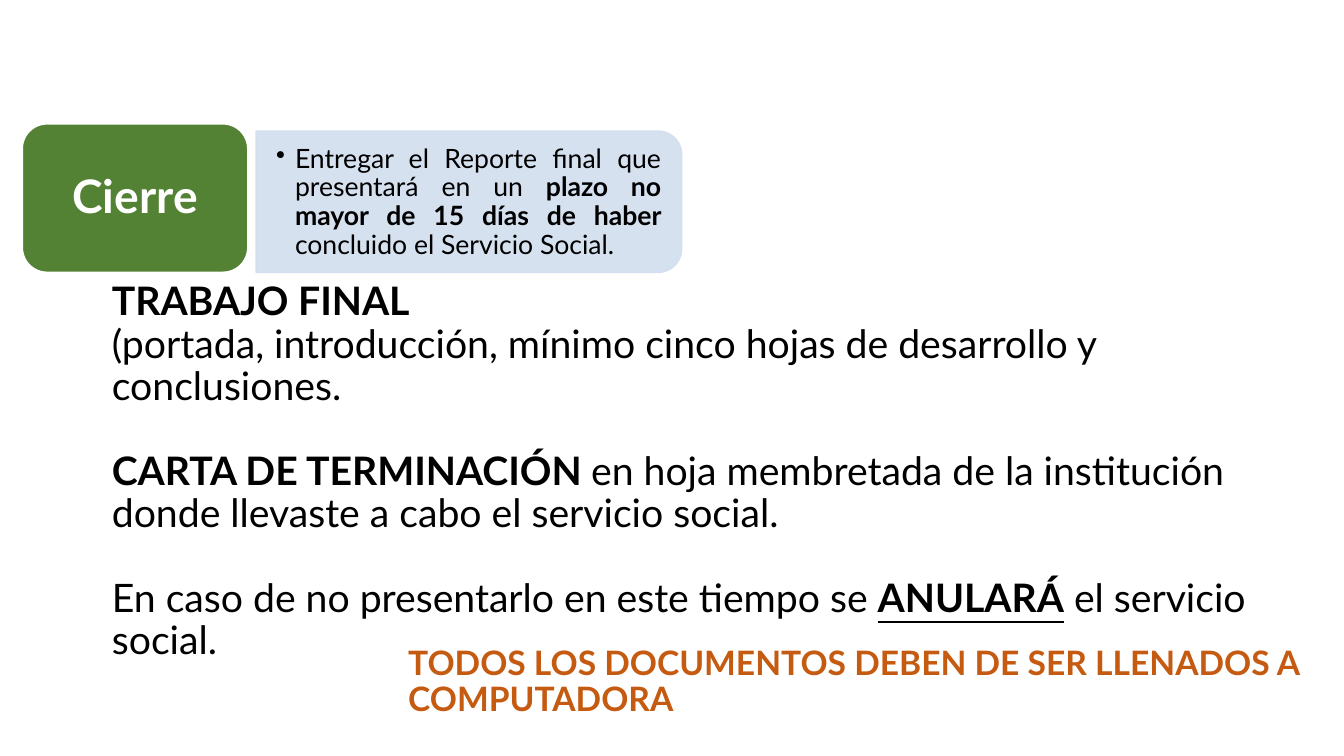
import dataclasses

import lxml.etree
import pptx
import pptx.dml.color
import pptx.enum.shapes
import pptx.enum.text
import pptx.oxml.ns
import pptx.util

Pt = pptx.util.Pt
Align = pptx.enum.text.PP_ALIGN
Anchor = pptx.enum.text.MSO_ANCHOR
Shape = pptx.enum.shapes.MSO_SHAPE


@dataclasses.dataclass(frozen=True)
class Theme:
    font: str = "Lato"
    ink: str = "000000"
    paper: str = "FFFFFF"
    stage: str = "548235"
    panel: str = "D2DEEF"
    warning: str = "C55A11"
    stage_size: int = 33
    body_size: int = 28
    warning_size: int = 24
    panel_size: int = 19
    line_spacing: float = 0.9


def rgb(value):
    return pptx.dml.color.RGBColor.from_string(value)


def add_run(paragraph, text, *, font, size, color, bold=False, underline=False):
    run = paragraph.add_run()
    run.text = text
    run.font.name = font
    run.font.size = Pt(size)
    run.font.bold = bold
    run.font.underline = underline
    run.font.color.rgb = rgb(color)


def add_element(parent, tag, **attributes):
    return lxml.etree.SubElement(parent, pptx.oxml.ns.qn(tag), attributes)


class SlideBuilder:
    def __init__(self, slide, theme):
        self.slide = slide
        self.theme = theme

    def fill_text(self, shape, paragraphs, size, color, *, align=Align.LEFT,
                  anchor=Anchor.MIDDLE, margins=(7.2, 3.6), gap=0, bullet=None, indent=0):
        frame = shape.text_frame
        frame.word_wrap = True
        frame.auto_size = pptx.enum.text.MSO_AUTO_SIZE.NONE
        frame.vertical_anchor = anchor
        frame.margin_left = frame.margin_right = Pt(margins[0])
        frame.margin_top = frame.margin_bottom = Pt(margins[1])
        for index, (starts_block, runs) in enumerate(paragraphs):
            paragraph = frame.add_paragraph() if index else frame.paragraphs[0]
            paragraph.alignment = align
            paragraph.line_spacing = self.theme.line_spacing
            paragraph.space_before = Pt(gap if index and starts_block else 0)
            paragraph.space_after = Pt(0)
            properties = paragraph._p.get_or_add_pPr()
            properties.set("marL", str(Pt(indent)))
            properties.set("indent", str(-Pt(indent)))
            if bullet:
                add_element(properties, "a:buChar", char=bullet)
            else:
                add_element(properties, "a:buNone")
            for text, style in runs:
                add_run(paragraph, text, font=self.theme.font, size=size, color=color, **style)

    def placeholder(self, index, box, paragraphs, size, color, **layout):
        shape = self.slide.placeholders[index]
        shape.left, shape.top, shape.width, shape.height = map(Pt, box)
        self.fill_text(shape, paragraphs, size, color, **layout)

    def shape(self, kind, box, fill, line, rotation=0, opacity=100):
        shape = self.slide.shapes.add_shape(kind, *map(Pt, box))
        shape.shadow.inherit = False
        shape.rotation = rotation
        shape.fill.solid()
        shape.fill.fore_color.rgb = rgb(fill)
        shape.line.color.rgb = rgb(line)
        shape.line.width = Pt(1)
        if opacity < 100:
            for color in shape._element.spPr.iter(pptx.oxml.ns.qn("a:srgbClr")):
                add_element(color, "a:alpha", val=str(opacity * 1000))
        return shape

    def text_box(self, box, paragraphs, size, color, **layout):
        shape = self.slide.shapes.add_textbox(*map(Pt, box))
        self.fill_text(shape, paragraphs, size, color, **layout)


PLAIN = {}
BOLD = {"bold": True}
STRESSED = {"bold": True, "underline": True}

STAGE = [(True, [("Cierre", BOLD)])]
DELIVERY = [(True, [
    ("Entregar el Reporte final que presentará en un ", PLAIN),
    ("plazo no mayor de 15 días de haber ", BOLD),
    ("concluido el Servicio Social.", PLAIN),
])]
REQUIREMENTS = [
    (True, [("TRABAJO FINAL", BOLD)]),
    (False, [("(portada, introducción, mínimo cinco hojas de desarrollo y conclusiones.", PLAIN)]),
    (True, [
        ("CARTA DE TERMINACIÓN ", BOLD),
        ("en hoja membretada de la institución donde llevaste a cabo el servicio social.", PLAIN),
    ]),
    (True, [
        ("En caso de no presentarlo en este tiempo se ", PLAIN),
        ("ANULARÁ", STRESSED),
        (" el servicio social.", PLAIN),
    ]),
]
WARNING = [(True, [("TODOS LOS DOCUMENTOS DEBEN DE SER LLENADOS A COMPUTADORA", BOLD)])]


def main():
    theme = Theme()
    presentation = pptx.Presentation()
    presentation.slide_width = Pt(960)
    presentation.slide_height = Pt(540)
    slide = presentation.slides.add_slide(presentation.slide_layouts[1])
    builder = SlideBuilder(slide, theme)

    stage = builder.shape(Shape.ROUNDED_RECTANGLE, (16, 88.5, 161, 106), theme.stage, theme.paper)
    builder.fill_text(stage, STAGE, theme.stage_size, theme.paper,
                      align=Align.CENTER, margins=(10, 5))

    builder.shape(Shape.ROUND_2_SAME_RECTANGLE, (284.4, -7.9, 101, 304),
                  theme.panel, theme.panel, rotation=90, opacity=90)
    builder.text_box((191.5, 106.5, 286.5, 76.5), DELIVERY, theme.panel_size, theme.ink,
                     align=Align.JUSTIFY, margins=(5.76, 2.88), bullet="•", indent=13.5)

    builder.placeholder(1, (72.7, 188.6, 828, 327.6), REQUIREMENTS, theme.body_size, theme.ink,
                        anchor=Anchor.TOP, margins=(7.2, 12.8), gap=30.24)
    builder.placeholder(0, (284.4, 435.6, 659.5, 104.4), WARNING,
                        theme.warning_size, theme.warning)

    presentation.save("out.pptx")


if __name__ == "__main__":
    main()
